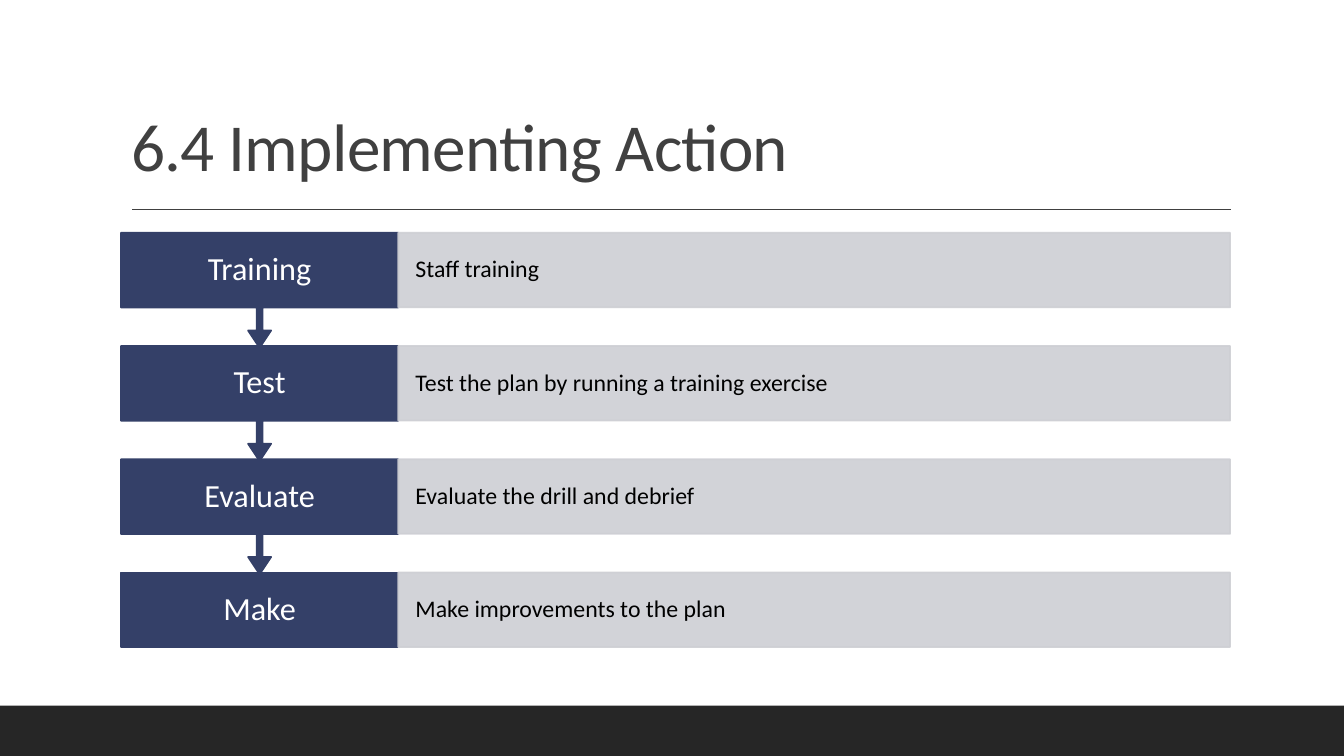
"""Build the slide on implementing action as a four-step process."""
import pptx
import pptx.dml.color
import pptx.enum.shapes
import pptx.enum.text
import pptx.oxml
import pptx.oxml.ns
import pptx.util

Inches = pptx.util.Inches
Pt = pptx.util.Pt
SHAPES = pptx.enum.shapes.MSO_SHAPE
ALIGN = pptx.enum.text.PP_ALIGN
ANCHOR = pptx.enum.text.MSO_ANCHOR

COLORS = {
    "footer": "262626",
    "title": "404040",
    "step": "344068",
    "detail": "CECFD4",
    "step_text": "FFFFFF",
    "detail_text": "000000",
}
STEPS = [
    ("Training", "Staff training"),
    ("Test", "Test the plan by running a training exercise"),
    ("Evaluate", "Evaluate the drill and debrief"),
    ("Make", "Make improvements to the plan"),
]
LEFT, STEP_WIDTH, DETAIL_WIDTH = 1.2, 2.75, 8.25
FIRST_TOP, LAST_TOP = 2.31, 5.68
ROW_HEIGHT, CALLOUT_HEIGHT = 0.74, 1.14
ARROW_ADJUSTMENTS = (0.05, 0.1, 0.15, 0.65)
STEP_FRAME = {
    "margin_left": Inches(0.2), "margin_right": Inches(0.2),
    "margin_top": Inches(0.18), "margin_bottom": Inches(0.18),
}
DETAIL_FRAME = {
    "margin_left": Inches(0.17), "margin_right": Inches(0.17),
    "margin_top": Inches(0.24), "margin_bottom": Inches(0.24),
}


def rgb(name):
    """Return the named colour."""
    return pptx.dml.color.RGBColor.from_string(COLORS[name])


def apply(target, values):
    """Set each attribute in values on target."""
    for attribute, value in values.items():
        setattr(target, attribute, value)


def write(frame, text, size, color, align, anchor, margins):
    """Put one formatted paragraph into a text frame."""
    apply(frame, {"word_wrap": True, "vertical_anchor": anchor,
                  "auto_size": pptx.enum.text.MSO_AUTO_SIZE.NONE, **margins})
    paragraph = frame.paragraphs[0]
    apply(paragraph, {"alignment": align, "line_spacing": 0.9})
    run = paragraph.add_run()
    run.text = text
    apply(run.font, {"name": "Calibri", "size": Pt(size)})
    run.font.color.rgb = rgb(color)
    return run


def add_block(slide, kind, box, color, line_width=None):
    """Add a filled shape, outlined in its own colour if a width is given."""
    block = slide.shapes.add_shape(kind, *map(Inches, box))
    block.shadow.inherit = False
    block.fill.solid()
    block.fill.fore_color.rgb = rgb(color)
    if line_width:
        block.line.color.rgb = rgb(color)
        block.line.width = Pt(line_width)
    else:
        block.line.fill.background()
    return block


def make_translucent(block, percent):
    """Set the opacity of a block's fill and line."""
    for color in block.element.spPr.iter(pptx.oxml.ns.qn("a:srgbClr")):
        alpha = color.makeelement(pptx.oxml.ns.qn("a:alpha"), {"val": str(percent * 1000)})
        color.append(alpha)


def add_rule(slide):
    """Add the line under the title."""
    rule = slide.shapes.add_connector(
        pptx.enum.shapes.MSO_CONNECTOR.STRAIGHT,
        Inches(1.31), Inches(2.08), Inches(12.21), Inches(2.08))
    rule.line.color.rgb = rgb("title")
    rule.line.width = Pt(1)
    properties = rule.element.spPr
    properties.append(properties.makeelement(pptx.oxml.ns.qn("a:effectLst"), {}))


def add_title(slide, text):
    """Place and fill the title placeholder."""
    title = slide.shapes.title
    apply(title, {"left": Inches(LEFT), "top": Inches(0.31),
                  "width": Inches(11), "height": Inches(1.59)})
    run = write(title.text_frame, text, 48, "title", ALIGN.LEFT, ANCHOR.BOTTOM, {})
    run.font._element.set("spc", "-50")


def add_step(slide, top, name, detail, is_last):
    """Add one step with its detail bar, and an arrow unless it is last."""
    kind = SHAPES.RECTANGLE if is_last else SHAPES.DOWN_ARROW_CALLOUT
    height = ROW_HEIGHT if is_last else CALLOUT_HEIGHT
    step = add_block(slide, kind, (LEFT, top, STEP_WIDTH, height), "step", 1.25)
    if not is_last:
        for index, value in enumerate(ARROW_ADJUSTMENTS):
            step.adjustments[index] = value
    write(step.text_frame, name, 23, "step_text", ALIGN.CENTER, ANCHOR.MIDDLE, STEP_FRAME)

    bar = add_block(slide, SHAPES.RECTANGLE,
                    (LEFT + STEP_WIDTH, top, DETAIL_WIDTH, ROW_HEIGHT), "detail", 1.25)
    make_translucent(bar, 90)
    write(bar.text_frame, detail, 17, "detail_text", ALIGN.LEFT, ANCHOR.MIDDLE, DETAIL_FRAME)


def main():
    """Build and save the presentation."""
    presentation = pptx.Presentation()
    apply(presentation, {"slide_width": Inches(13.33), "slide_height": Inches(7.5)})
    slide = presentation.slides.add_slide(presentation.slide_layouts[5])
    add_block(slide, SHAPES.RECTANGLE, (0, 7, 13.33, 0.5), "footer")
    add_rule(slide)
    add_title(slide, "6.4 Implementing Action")
    last = len(STEPS) - 1
    pitch = (LAST_TOP - FIRST_TOP) / last
    for index, (name, detail) in reversed(list(enumerate(STEPS))):
        add_step(slide, FIRST_TOP + index * pitch, name, detail, index == last)
    presentation.save("out.pptx")


if __name__ == "__main__":
    main()
